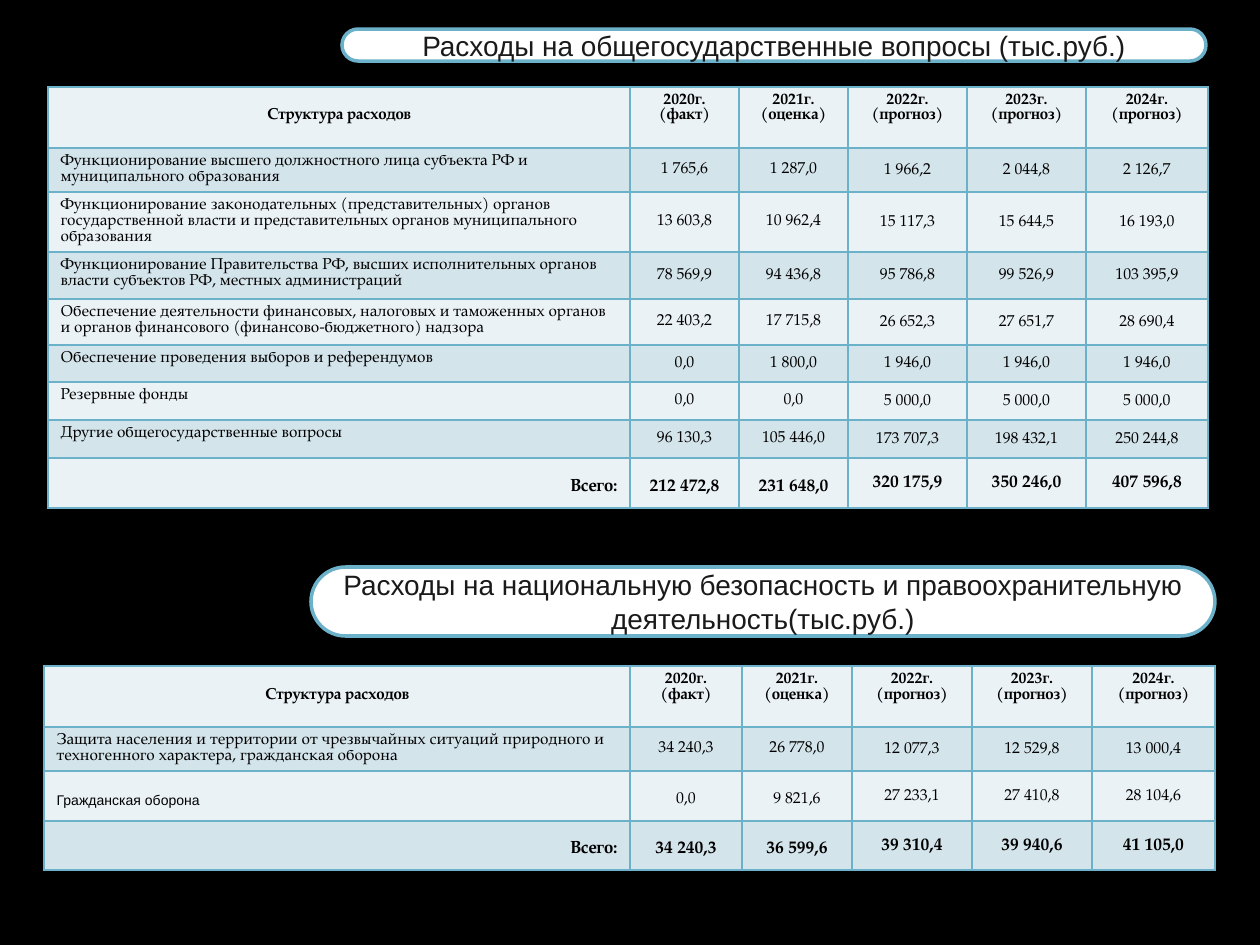
from lxml import etree
from pptx import Presentation
from pptx.dml.color import RGBColor
from pptx.enum.shapes import MSO_SHAPE
from pptx.enum.text import MSO_ANCHOR, PP_ALIGN
from pptx.oxml.ns import qn
from pptx.util import Pt

ROUND = MSO_SHAPE.ROUNDED_RECTANGLE
TOP, MIDDLE = MSO_ANCHOR.TOP, MSO_ANCHOR.MIDDLE
LEFT, CENTER, RIGHT = PP_ALIGN.LEFT, PP_ALIGN.CENTER, PP_ALIGN.RIGHT
SERIF, SANS = "TeX Gyre Pagella", "Arial"
BORDER, BANDS = "6BB1C9", ("EBF2F5", "D4E4EB")
HEADER = ["Структура расходов", "2020г. (факт)", "2021г. (оценка)",
          "2022г. (прогноз)", "2023г. (прогноз)", "2024г. (прогноз)"]

GENERAL = [
    ["Функционирование высшего должностного лица субъекта РФ и муниципального образования",
     "1 765,6", "1 287,0", "1 966,2", "2 044,8", "2 126,7"],
    ["Функционирование законодательных (представительных) органов государственной власти "
     "и представительных органов муниципального образования",
     "13 603,8", "10 962,4", "15 117,3", "15 644,5", "16 193,0"],
    ["Функционирование Правительства РФ, высших исполнительных органов власти субъектов РФ, "
     "местных администраций",
     "78 569,9", "94 436,8", "95 786,8", "99 526,9", "103 395,9"],
    ["Обеспечение деятельности финансовых, налоговых и таможенных органов и органов "
     "финансового (финансово-бюджетного) надзора",
     "22 403,2", "17 715,8", "26 652,3", "27 651,7", "28 690,4"],
    ["Обеспечение проведения выборов и референдумов",
     "0,0", "1 800,0", "1 946,0", "1 946,0", "1 946,0"],
    ["Резервные фонды", "0,0", "0,0", "5 000,0", "5 000,0", "5 000,0"],
    ["Другие общегосударственные вопросы",
     "96 130,3", "105 446,0", "173 707,3", "198 432,1", "250 244,8"],
    ["Всего:", "212 472,8", "231 648,0", "320 175,9", "350 246,0", "407 596,8"],
]
SECURITY = [
    ["Защита населения и территории от чрезвычайных ситуаций природного и техногенного "
     "характера, гражданская оборона",
     "34 240,3", "26 778,0", "12 077,3", "12 529,8", "13 000,4"],
    ["Гражданская оборона", "0,0", "9 821,6", "27 233,1", "27 410,8", "28 104,6"],
    ["Всего:", "34 240,3", "36 599,6", "39 310,4", "39 940,6", "41 105,0"],
]


def px(n):
    return round(n * 914400 / 126)


def rgb(value):
    return RGBColor.from_string(value)


def add_text(tf, text, size, font, color, align, bold=False, spacing=None):
    tf.word_wrap = True
    p = tf.paragraphs[0]
    p.alignment = align
    if spacing:
        p.line_spacing = spacing
    r = p.add_run()
    r.text = text
    r.font.size, r.font.name, r.font.bold = Pt(size), font, bold
    r.font.color.rgb = rgb(color)


def add_title(s, x, y, w, h, text):
    sp = s.shapes.add_shape(ROUND, px(x), px(y), px(w), px(h))
    sp.adjustments[0] = 0.5
    sp.shadow.inherit = False
    sp.fill.solid()
    sp.fill.fore_color.rgb = rgb("FFFFFF")
    sp.line.color.rgb = rgb(BORDER)
    sp.line.width = Pt(2)
    sp.text_frame.vertical_anchor = MIDDLE
    add_text(sp.text_frame, text, 16, SANS, "1A1A1B", CENTER)


def style_cell(cell, fill):
    tc_pr = cell._tc.get_or_add_tcPr()
    for side in ("a:lnL", "a:lnR", "a:lnT", "a:lnB"):
        ln = etree.SubElement(tc_pr, qn(side), w=str(Pt(1)))
        solid = etree.SubElement(ln, qn("a:solidFill"))
        etree.SubElement(solid, qn("a:srgbClr"), val=BORDER)
    cell.fill.solid()
    cell.fill.fore_color.rgb = rgb(fill)


def fill_cell(cell, text, row, col, total, spaced):
    header, forecast = row == 0, col > 2
    style_cell(cell, BANDS[row % 2])
    cell.vertical_anchor = TOP if header or (col == 0 and not spaced) else MIDDLE
    if forecast and not header:
        cell.margin_left = cell.margin_right = cell.margin_top = px(1)
        cell.margin_bottom = 0
    align = CENTER if header or col else RIGHT if total else LEFT
    spacing = 2.0 if header and col == 0 else 1.5 if spaced and not forecast else None
    sans = spaced and not total and col == 0
    size = 10 if total else 8 if sans else 9
    add_text(cell.text_frame, text, size, SANS if sans else SERIF, "000000",
             align, header or total, spacing)


def add_budget(s, x, y, widths, heights, data, spaced_rows):
    rows = [HEADER] + data
    frame = s.shapes.add_table(len(rows), len(widths), px(x), px(y),
                               px(sum(widths)), px(sum(heights)))
    table = frame.table
    table.horz_banding = table.first_row = False
    for column, w in zip(table.columns, widths):
        column.width = px(w)
    for i, (values, h) in enumerate(zip(rows, heights)):
        table.rows[i].height = px(h)
        total = i == len(rows) - 1
        for j, text in enumerate(values):
            fill_cell(table.cell(i, j), text, i, j, total, i in spaced_rows)


def main():
    prs = Presentation()
    prs.slide_width, prs.slide_height = px(1260), px(945)
    s = prs.slides.add_slide(prs.slide_layouts[6])
    s.background.fill.solid()
    s.background.fill.fore_color.rgb = rgb("000000")
    add_title(s, 342, 29, 864, 32, "Расходы на общегосударственные вопросы (тыс.руб.)")
    add_budget(s, 48, 87, [582, 109, 109, 119, 119, 122],
               [61, 43, 60, 47, 46, 37, 38, 38, 50], GENERAL, {8})
    add_title(s, 311, 567, 904, 69,
              "Расходы на национальную безопасность и правоохранительную деятельность(тыс.руб.)")
    add_budget(s, 44, 666, [586, 112, 110, 120, 120, 123], [61, 44, 50, 49], SECURITY, {2, 3})
    prs.save("out.pptx")


if __name__ == "__main__":
    main()
